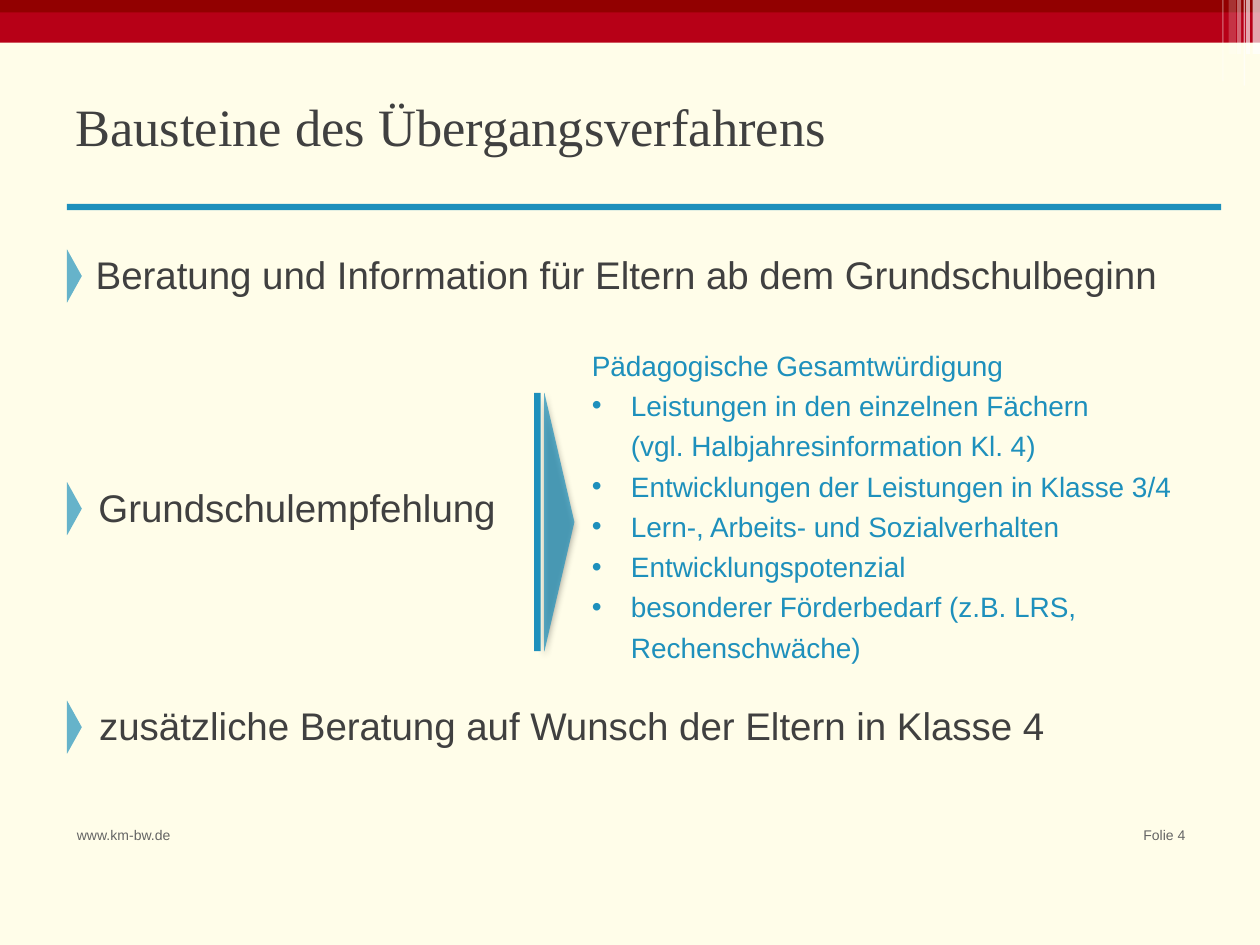
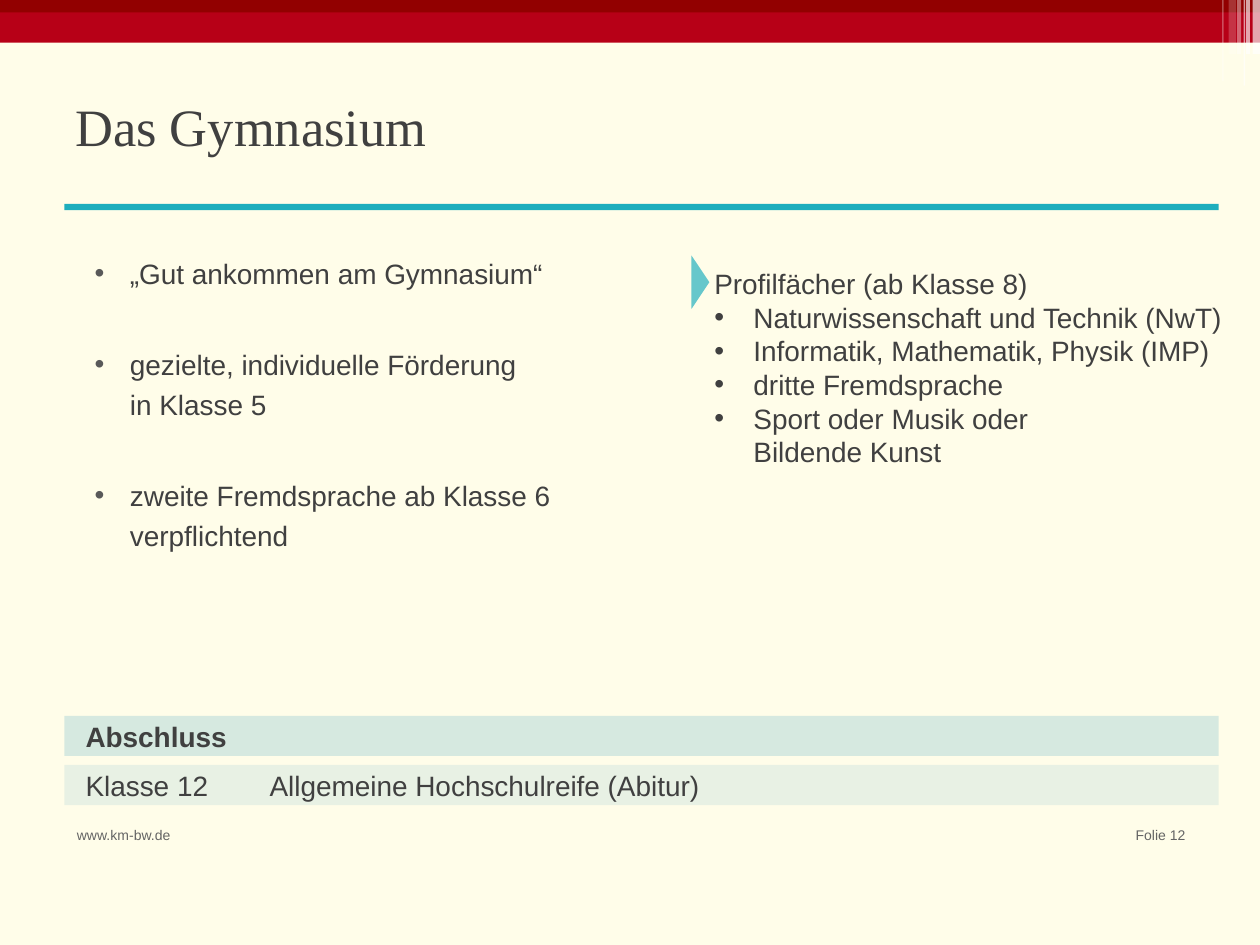
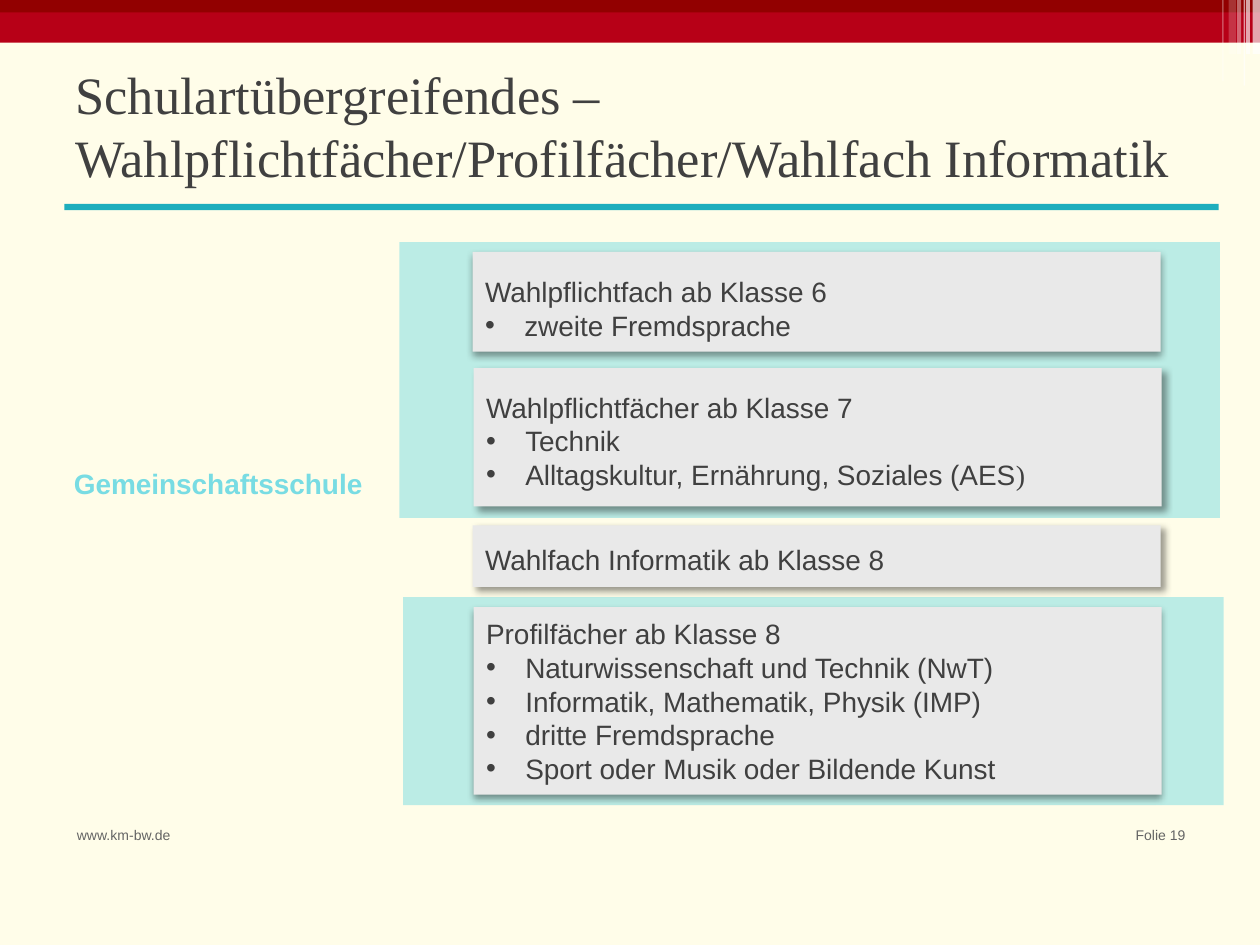
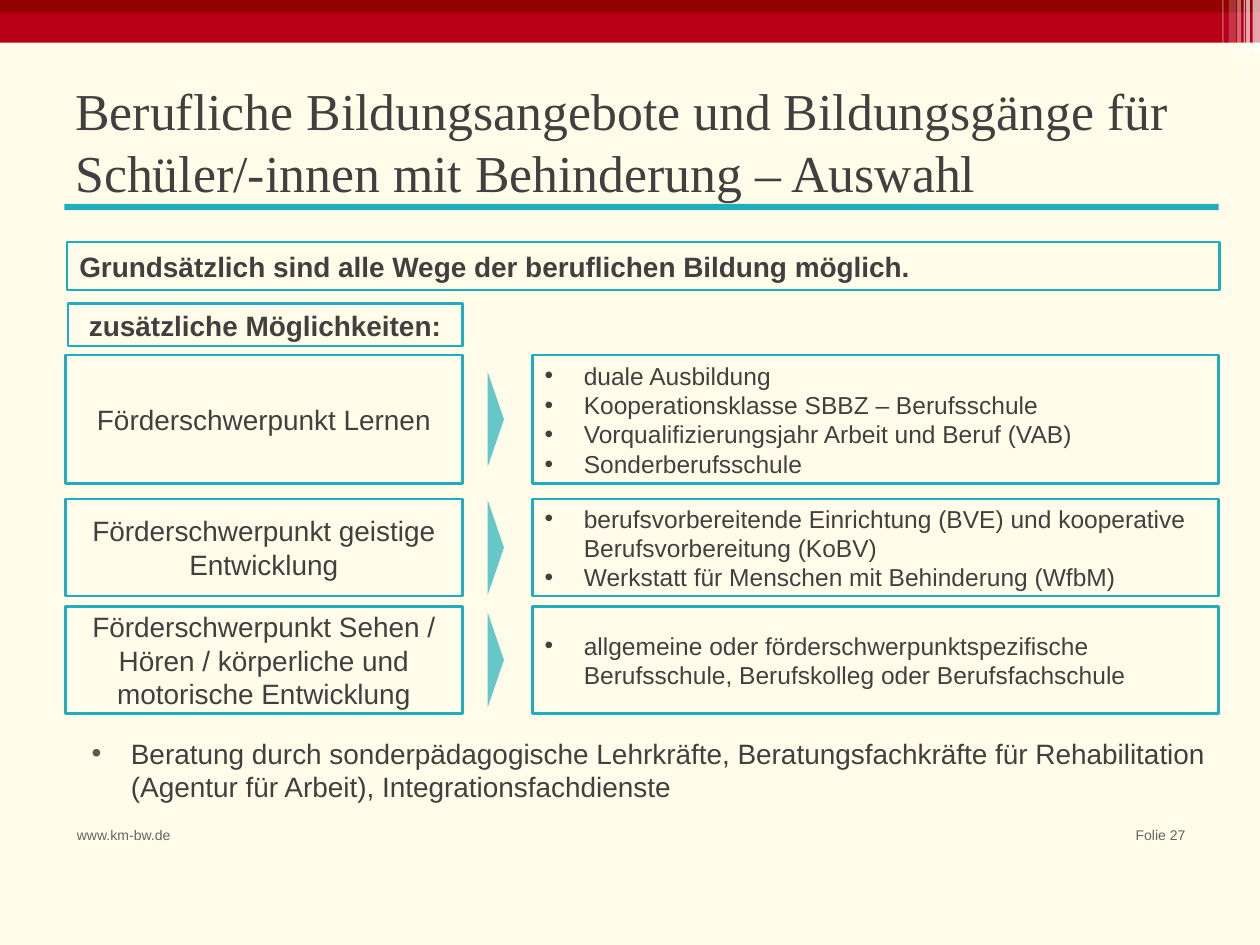
"""Build four slides about school transitions and school types."""
from typing import NamedTuple

from lxml import etree
from pptx import Presentation
from pptx.dml.color import RGBColor
from pptx.enum.shapes import MSO_SHAPE
from pptx.enum.text import MSO_ANCHOR, PP_ALIGN
from pptx.oxml.ns import qn
from pptx.util import Cm, Pt

RECT = MSO_SHAPE.RECTANGLE
ROUND = MSO_SHAPE.ROUNDED_RECTANGLE
PROCESS = MSO_SHAPE.FLOWCHART_PROCESS
PENTAGON = MSO_SHAPE.PENTAGON
TOP, MIDDLE = MSO_ANCHOR.TOP, MSO_ANCHOR.MIDDLE
LEFT, CENTER, RIGHT = PP_ALIGN.LEFT, PP_ALIGN.CENTER, PP_ALIGN.RIGHT

CREAM, WHITE, BLACK = "FFFDE9", "FFFFFF", "000000"
RED, DARK_RED = "B70017", "920000"
BLUE, TEAL, AQUA = "1E90BC", "1EAEBD", "78DCE3"
TEXT, GREY, BULLET_GREY, CARD_GREY = "404040", "646464", "595959", "E9E9E9"
SANS, SERIF = "Arial", "Times New Roman"
NO_TABLE_STYLE = "{2D5ABB26-0587-4C30-8999-92F81FD0307C}"

STYLE = {"font": SANS, "size": 16, "color": TEXT, "bold": False, "align": LEFT,
         "spacing": None, "before": 0, "margin": 0, "hanging": 0,
         "bullet": False, "bullet_color": None, "tail": ""}
BULLET = {"bullet": True, "margin": 0.79, "hanging": 0.79}
DOWN_SHADOW = {"blur": 4.1, "distance": 2, "angle": 90, "alpha": 40}
SIDE_SHADOW = {"blur": 4, "distance": 3, "angle": 45, "alpha": 40}
ARROW_SHADOW = {"blur": 4, "distance": 2, "angle": 90, "alpha": 45}
ELECTIVES = ["Naturwissenschaft und Technik (NwT)",
             "Informatik, Mathematik, Physik (IMP)",
             "dritte Fremdsprache"]


class Box(NamedTuple):
    """Hold a position and a size in centimetres."""
    left: float
    top: float
    width: float
    height: float

    def lengths(self):
        """Return the four lengths for python-pptx."""
        return [Cm(value) for value in self]


def rgb(color):
    """Turn a hex string into a colour."""
    return RGBColor.from_string(color)


def bullets(*texts, **options):
    """Return bulleted lines for the given texts."""
    return [(text, {**BULLET, **options}) for text in texts]


def add_shadow(shape, blur, distance, angle, alpha):
    """Give a shape an outer shadow."""
    effects = shape._element.spPr.find(qn("a:effectLst"))
    shadow = etree.SubElement(effects, qn("a:outerShdw"), blurRad=str(Pt(blur)),
                              dist=str(Pt(distance)), dir=str(angle * 60000),
                              rotWithShape="0")
    color = etree.SubElement(shadow, qn("a:srgbClr"), val=BLACK)
    etree.SubElement(color, qn("a:alpha"), val=str(alpha * 1000))


def add_box(slide, box, kind=RECT, fill=None, alpha=100, line=None, shadow=None):
    """Draw a preset shape with optional fill, line and shadow."""
    shape = slide.shapes.add_shape(kind, *box.lengths())
    shape.shadow.inherit = False
    if kind == ROUND:
        shape.adjustments[0] = 0
    if kind == PENTAGON:
        shape.adjustments[0] = 0.99
    if fill:
        shape.fill.solid()
        shape.fill.fore_color.rgb = rgb(fill)
        if alpha < 100:
            color = shape._element.spPr.find(".//" + qn("a:srgbClr"))
            etree.SubElement(color, qn("a:alpha"), val=str(alpha * 1000))
    else:
        shape.fill.background()
    if line:
        shape.line.color.rgb = rgb(line)
        shape.line.width = Pt(1.5)
    else:
        shape.line.fill.background()
    if shadow:
        add_shadow(shape, **shadow)
    return shape


def format_paragraph(paragraph, text, style):
    """Fill one paragraph and apply its style."""
    properties = paragraph._p.get_or_add_pPr()
    if style["margin"]:
        properties.set("marL", str(Cm(style["margin"])))
        properties.set("indent", str(-Cm(style["hanging"])))
    if style["bullet"]:
        if style["bullet_color"]:
            color = etree.SubElement(properties, qn("a:buClr"))
            etree.SubElement(color, qn("a:srgbClr"), val=style["bullet_color"])
        etree.SubElement(properties, qn("a:buFont"), typeface=SANS)
        etree.SubElement(properties, qn("a:buChar"), char="•")
    paragraph.text = text
    if style["tail"]:
        paragraph.add_run().text = style["tail"]
    layout = {"alignment": style["align"], "line_spacing": style["spacing"],
              "space_before": Pt(style["before"])}
    for name, value in layout.items():
        setattr(paragraph, name, value)
    font = {"name": style["font"], "size": Pt(style["size"]), "bold": style["bold"]}
    for run in paragraph.runs:
        for name, value in font.items():
            setattr(run.font, name, value)
        run.font.color.rgb = rgb(style["color"])
    if style["tail"]:
        paragraph.runs[-1].font.name = SERIF
    for line_break in paragraph._p.findall(qn("a:br")):
        etree.SubElement(line_break, qn("a:rPr"), sz=str(style["size"] * 100))


def write(frame, lines, anchor=MIDDLE, right=0.25, **style):
    """Write lines, each a text or a text with options, into a text frame."""
    settings = {"word_wrap": True, "vertical_anchor": anchor,
                "margin_left": Cm(0.25), "margin_right": Cm(right),
                "margin_top": Cm(0.13), "margin_bottom": Cm(0.13)}
    for name, value in settings.items():
        setattr(frame, name, value)
    for index, line in enumerate(lines):
        text, options = (line, {}) if isinstance(line, str) else line
        paragraph = frame.add_paragraph() if index else frame.paragraphs[0]
        format_paragraph(paragraph, text, {**STYLE, **style, **options})


def add_text(slide, box, lines, **style):
    """Place a text box."""
    write(slide.shapes.add_textbox(*box.lengths()).text_frame, lines, **style)


def add_marker(slide, left, middle, width, height, color):
    """Draw a translucent pointer centred on a height."""
    box = Box(left, middle - height / 2, width, height)
    add_box(slide, box, PENTAGON, color, alpha=68)


def add_header(slide, box):
    """Draw the red band with its light strips at the right end."""
    add_box(slide, box, fill=RED)
    add_box(slide, box._replace(height=0.25), fill=DARK_RED)
    strips = [(0.28, 0.08, 1.09, 65), (0.15, 0.15, 1.09, 65), (0.76, 0.03, 1.63, 30),
              (0.33, 0.03, 1.73, 60), (0.63, 0.15, 1.09, 20), (0.46, 0.08, 1.09, 40)]
    for offset, width, height, alpha in strips:
        strip = Box(box.left + box.width - offset, box.top, width, height)
        add_box(slide, strip, fill=WHITE, alpha=alpha)


def add_footer(slide, box, number):
    """Write the address on the left and the slide number on the right."""
    style = {"anchor": TOP, "size": 8, "color": GREY}
    add_text(slide, box._replace(width=2.54), ["www.km-bw.de"], **style)
    number_box = box._replace(left=box.left + box.width - 2.46, width=2.46)
    add_text(slide, number_box, [f"Folie {number}"], align=RIGHT, **style)


def add_base(presentation, number, title, title_height=1.96, title_size=30,
             color=TEAL, rule_left=1.3):
    """Add a slide with background, header, title, rule and footer."""
    slide = presentation.slides.add_slide(presentation.slide_layouts[6])
    slide.background.fill.solid()
    slide.background.fill.fore_color.rgb = rgb(CREAM)
    add_header(slide, Box(0, 0, 25.4, 0.86))
    add_footer(slide, Box(1.3, 16.54, 22.85, 0.99), number)
    add_box(slide, Box(rule_left, 4.11, 23.27, 0.13), fill=color)
    add_text(slide, Box(1.27, 1.55, 22.86, title_height), title,
             font=SERIF, size=title_size)
    return slide


def add_topic(slide, box, text, align=LEFT):
    """Write a main topic with a pointer before it."""
    shape = add_box(slide, box, PROCESS)
    write(shape.text_frame, [text], size=22, align=align)
    add_marker(slide, 1.35, box.top + box.height / 2 + 0.04, 0.3, 1.07, BLUE)


def add_assessment(slide, box):
    """Draw the wide pointer and the list of assessment criteria."""
    pointer = Box(box.left + 0.2, box.top + 1.19, 0.61, 5.21)
    add_box(slide, pointer, PENTAGON, BLUE, alpha=70, shadow=ARROW_SHADOW)
    add_box(slide, pointer._replace(left=box.left, width=0.13), fill=BLUE)
    lines = ["Pädagogische Gesamtwürdigung",
             *bullets("Leistungen in den einzelnen Fächern"),
             ("(vgl. Halbjahresinformation Kl. 4)", {"margin": 0.79}),
             *bullets("Entwicklungen der Leistungen in Klasse 3/4",
                      "Lern-, Arbeits- und Sozialverhalten",
                      "Entwicklungspotenzial",
                      "besonderer Förderbedarf (z.B. LRS, Rechenschwäche)")]
    text_box = box._replace(left=box.left + 0.91, width=box.width - 0.91)
    add_text(slide, text_box, lines, color=BLUE, spacing=1.2)


def build_transition(presentation):
    """Build the slide on the parts of the transition procedure."""
    slide = add_base(presentation, 4, ["Bausteine des Übergangsverfahrens"],
                     color=BLUE, rule_left=1.35)
    add_topic(slide, Box(1.68, 4.52, 22.23, 2.01),
              "Beratung und Information für Eltern ab dem Grundschulbeginn")
    add_topic(slide, Box(1.57, 7.32, 8.84, 5.79), "Grundschulempfehlung", CENTER)
    add_topic(slide, Box(1.75, 13.92, 22.23, 1.4),
              "zusätzliche Beratung auf Wunsch der Eltern in Klasse 4")
    add_assessment(slide, Box(10.77, 6.73, 13.94, 6.81))


def add_degree(slide, box):
    """Draw the degree table over two tinted bands."""
    row_height = box.height / 2
    for row, alpha in enumerate((18, 10)):
        band = Box(box.left, box.top + row * row_height, box.width, 0.81)
        add_box(slide, band, fill=BLUE, alpha=alpha)
    table_box = Box(box.left + 0.17, box.top, 21.41, box.height)
    table = slide.shapes.add_table(2, 2, *table_box.lengths()).table
    table._tbl.tblPr.find(qn("a:tableStyleId")).text = NO_TABLE_STYLE
    table.first_row = table.horz_banding = False
    for column, width in zip(table.columns, (3.71, 17.7)):
        column.width = Cm(width)
    table.cell(0, 0).merge(table.cell(0, 1))
    entries = {(0, 0): "Abschluss", (1, 0): "Klasse 12",
               (1, 1): "Allgemeine Hochschulreife (Abitur)"}
    for (row, column), text in entries.items():
        cell = table.cell(row, column)
        cell.fill.background()
        cell.margin_top = cell.margin_bottom = Cm(0.13)
        format_paragraph(cell.text_frame.paragraphs[0], text,
                         {**STYLE, "bold": row == 0})


def add_profile(slide, box):
    """List the profile subjects beside a pointer."""
    lines = ["Profilfächer (ab Klasse 8)",
             *bullets(*ELECTIVES, "Sport oder Musik oder\vBildende Kunst")]
    write(add_box(slide, box, ROUND).text_frame, lines)
    add_marker(slide, box.left - 0.21, box.top + 0.58, 0.36, 1.07, TEAL)


def build_grammar_school(presentation):
    """Build the slide on the grammar school."""
    slide = add_base(presentation, 12, ["Das Gymnasium"])
    offers = bullets("„Gut ankommen am Gymnasium“",
                     "gezielte, individuelle Förderung\vin Klasse 5",
                     "zweite Fremdsprache ab Klasse 6 verpflichtend",
                     margin=1.02, hanging=0.71, bullet_color=BULLET_GREY)
    for text, options in offers[1:]:
        options["before"] = 29
    add_text(slide, Box(1.35, 4.9, 12.4, 7.39), offers,
             anchor=TOP, right=1.5, spacing=1.2)
    add_degree(slide, Box(1.3, 14.43, 23.27, 1.98))
    add_profile(slide, Box(14.15, 5.11, 11.25, 4.6))


def add_card(slide, box, heading, items, spacing, shadow):
    """Draw a grey card with a heading and bulleted subjects."""
    shape = add_box(slide, box, ROUND, CARD_GREY, shadow=shadow)
    write(shape.text_frame, [(heading, {"spacing": spacing}), *items])


def build_electives(presentation):
    """Build the slide on elective subjects across school types."""
    slide = add_base(presentation, 19, [
        "Schulartübergreifendes –",
        "Wahlpflichtfächer/Profilfächer/Wahlfach Informatik"])
    for panel in (Box(8.13, 12.04, 16.54, 4.19), Box(8.05, 4.88, 16.54, 5.56)):
        add_box(slide, panel, ROUND, AQUA, alpha=50)
    label = add_box(slide, Box(1.24, 8.74, 6.6, 2.01), ROUND)
    write(label.text_frame, ["Gemeinschaftsschule"], color=AQUA, bold=True)
    cards = [
        (9.53, 5.08, 2.01, "Wahlpflichtfach ab Klasse 6",
         bullets("zweite Fremdsprache"), 1.4, DOWN_SHADOW),
        (9.55, 7.42, 2.79, "Wahlpflichtfächer ab Klasse 7",
         bullets("Technik")
         + bullets("Alltagskultur, Ernährung, Soziales (AES", tail=")"),
         1.2, SIDE_SHADOW),
        (9.53, 10.59, 1.24, "Wahlfach Informatik ab Klasse 8", [], 1.2, SIDE_SHADOW),
        (9.55, 12.24, 3.78, "Profilfächer ab Klasse 8",
         bullets(*ELECTIVES, "Sport oder Musik oder Bildende Kunst"),
         None, DOWN_SHADOW)]
    for left, top, height, *content in cards:
        add_card(slide, Box(left, top, 13.87, height), *content)


def add_framed(slide, box, lines, **style):
    """Write lines into a box with a teal frame."""
    write(add_box(slide, box, line=TEAL).text_frame, lines, **style)


def add_focus(slide, box, name, offers):
    """Draw a row that leads from a focus of support to its offers."""
    offers_left = 10.73
    add_framed(slide, box._replace(width=8), [name], align=CENTER)
    add_marker(slide, 9.83, box.top + box.height / 2, 0.33, 1.91, TEAL)
    offers_box = box._replace(left=offers_left, width=box.left + box.width - offers_left)
    add_framed(slide, offers_box, bullets(*offers), size=14)


def build_vocational(presentation):
    """Build the slide on vocational education with disabilities."""
    slide = add_base(presentation, 27, [
        "Berufliche Bildungsangebote und Bildungsgänge für "
        "Schüler/-innen mit Behinderung – Auswahl"], title_height=2.57, title_size=29.6)
    add_framed(slide, Box(1.35, 4.88, 23.24, 0.97),
               ["Grundsätzlich sind alle Wege der beruflichen Bildung möglich."], bold=True)
    add_framed(slide, Box(1.37, 6.12, 7.95, 0.86),
               ["zusätzliche Möglichkeiten:"], bold=True, align=CENTER)
    rows = [
        (7.16, 2.59, "Förderschwerpunkt Lernen",
         ["duale Ausbildung", "Kooperationsklasse SBBZ – Berufsschule",
          "Vorqualifizierungsjahr Arbeit und Beruf (VAB)", "Sonderberufsschule"]),
        (10.06, 1.96, "Förderschwerpunkt geistige Entwicklung",
         ["berufsvorbereitende Einrichtung (BVE) und kooperative "
          "Berufsvorbereitung (KoBV)",
          "Werkstatt für Menschen mit Behinderung (WfbM)"]),
        (12.23, 2.15,
         "Förderschwerpunkt Sehen / Hören / körperliche und motorische Entwicklung",
         ["allgemeine oder förderschwerpunktspezifische Berufsschule, "
          "Berufskolleg oder Berufsfachschule"])]
    for top, height, name, offers in rows:
        add_focus(slide, Box(1.32, top, 23.25, height), name, offers)
    advice = bullets("Beratung durch sonderpädagogische Lehrkräfte, "
                     "Beratungsfachkräfte für Rehabilitation (Agentur für Arbeit), "
                     "Integrationsfachdienste", margin=1.09, bullet_color=BULLET_GREY)
    add_text(slide, Box(1.3, 14.71, 23.27, 1.52), advice, anchor=TOP)


def main():
    """Build and save the presentation."""
    presentation = Presentation()
    presentation.slide_width, presentation.slide_height = Cm(25.4), Cm(19.05)
    for build in (build_transition, build_grammar_school,
                  build_electives, build_vocational):
        build(presentation)
    presentation.save("out.pptx")


if __name__ == "__main__":
    main()
